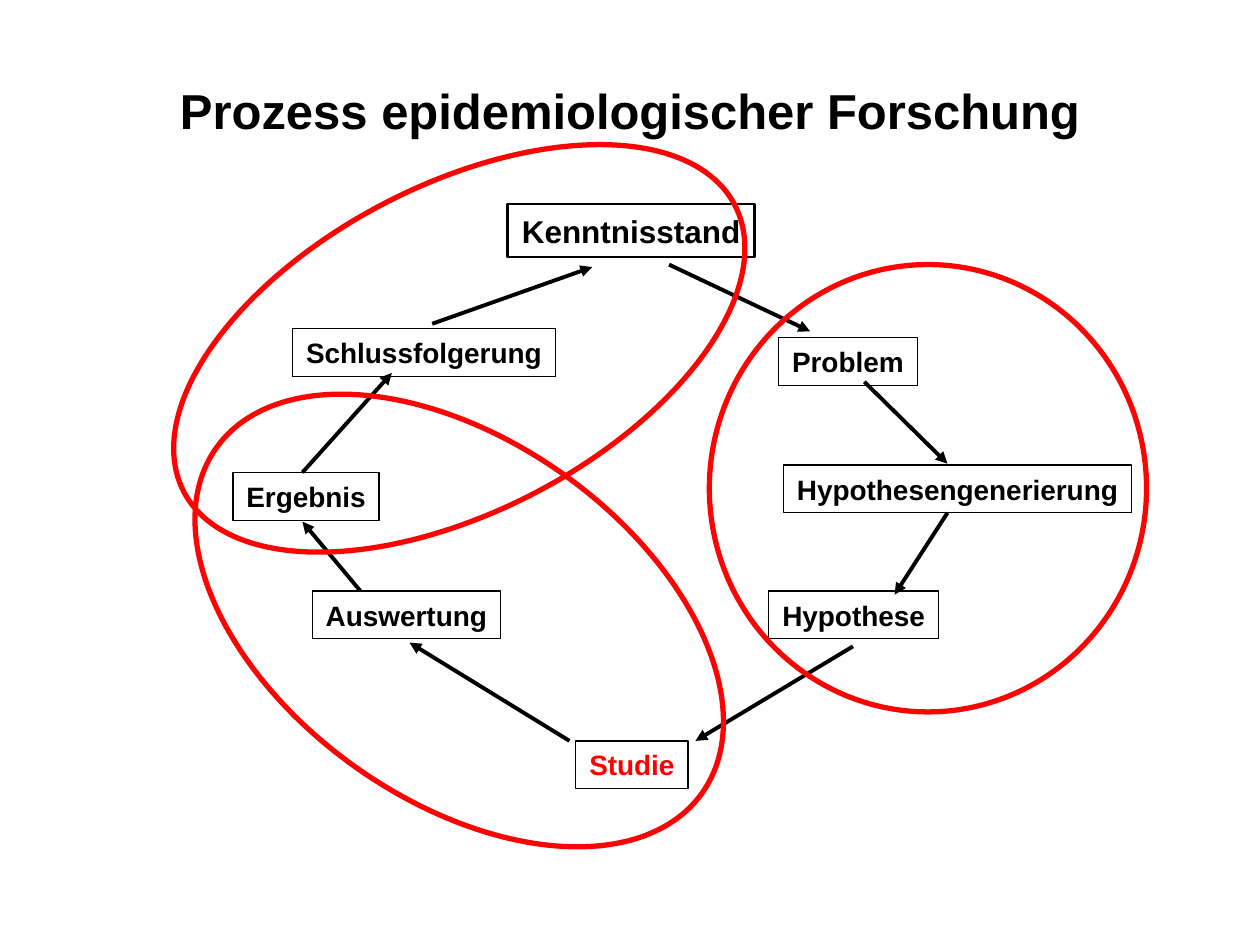
import pptx
import pptx.util
import pptx.dml.color
import pptx.enum.shapes
import pptx.enum.text
import pptx.oxml.ns
from lxml import etree
from pptx.util import Inches, Pt

BLACK = pptx.dml.color.RGBColor(0x00, 0x00, 0x00)
RED = pptx.dml.color.RGBColor(0xFF, 0x00, 0x00)
ELLIPSE_RED = pptx.dml.color.RGBColor(0xFC, 0x04, 0x04)
FONT = "Arial"
STEP_HEIGHT = 0.38

# label, left, top, width
STEPS = [
    ("Problem", 6.18, 2.68, 1.1),
    ("Hypothesengenerierung", 6.22, 3.69, 2.76),
    ("Hypothese", 6.1, 4.69, 1.35),
    ("Auswertung", 2.48, 4.69, 1.49),
    ("Ergebnis", 1.85, 3.75, 1.16),
    ("Schlussfolgerung", 2.32, 2.61, 2.09),
]

# start x, start y, end x, end y, clockwise from Kenntnisstand
ARROWS = [
    (5.31, 2.1, 6.43, 2.63),
    (6.86, 3.03, 7.52, 3.68),
    (7.52, 4.07, 7.1, 4.72),
    (6.77, 5.13, 5.52, 5.88),
    (4.52, 5.88, 3.25, 5.1),
    (2.86, 4.69, 2.4, 4.14),
    (2.4, 3.75, 3.11, 2.96),
    (3.43, 2.57, 4.7, 2.12),
]

# left, top, width, height, rotation
PHASES = [
    (5.63, 2.1, 3.47, 3.55, 0),
    (1.28, 3.5, 4.73, 2.85, 35.4),
    (2.35, 0.3, 2.59, 4.93, 62.5),
]


def write_text(shape, text, size, color, wrap):
    frame = shape.text_frame
    frame.text = text
    frame.word_wrap = wrap
    frame.vertical_anchor = pptx.enum.text.MSO_ANCHOR.MIDDLE
    paragraph = frame.paragraphs[0]
    paragraph.alignment = pptx.enum.text.PP_ALIGN.CENTER
    font = paragraph.runs[0].font
    font.name = FONT
    font.size = Pt(size)
    font.bold = True
    font.color.rgb = color


def add_outline(slide, kind, box, color, width):
    """Add an unfilled preset shape with a coloured outline."""
    shape = slide.shapes.add_shape(kind, *map(Inches, box))
    shape.shadow.inherit = False
    shape.fill.background()
    shape.line.color.rgb = color
    shape.line.width = Pt(width)
    return shape


def add_title(slide, box):
    title = slide.shapes.add_textbox(*map(Inches, box))
    write_text(title, "Prozess epidemiologischer Forschung", 28, BLACK, True)


def add_step(slide, label, box, size=16, color=BLACK, border=0.75):
    rectangle = pptx.enum.shapes.MSO_SHAPE.RECTANGLE
    shape = add_outline(slide, rectangle, box, BLACK, border)
    write_text(shape, label, size, color, False)


def add_arrow(slide, ends):
    straight = pptx.enum.shapes.MSO_CONNECTOR.STRAIGHT
    arrow = slide.shapes.add_connector(straight, *map(Inches, ends))
    arrow.line.color.rgb = BLACK
    arrow.line.width = Pt(2.25)
    qn = pptx.oxml.ns.qn
    line = arrow.line._get_or_add_ln()
    etree.SubElement(line, qn("a:tailEnd"), type="triangle")
    etree.SubElement(arrow._element.spPr, qn("a:effectLst"))


def add_cycle(slide):
    """Place the steps of the research process and the arrows between them."""
    add_step(slide, "Kenntnisstand", (4.03, 1.62, 1.96, 0.42), size=18, border=1.5)
    for label, left, top, width in STEPS:
        add_step(slide, label, (left, top, width, STEP_HEIGHT))
    add_step(slide, "Studie", (4.57, 5.88, 0.89, STEP_HEIGHT), color=RED)
    for ends in ARROWS:
        add_arrow(slide, ends)


def add_phases(slide):
    """Circle the steps that belong together."""
    for *box, rotation in PHASES:
        oval = pptx.enum.shapes.MSO_SHAPE.OVAL
        ellipse = add_outline(slide, oval, box, ELLIPSE_RED, 3)
        ellipse.rotation = rotation


def main():
    presentation = pptx.Presentation()
    presentation.slide_width = Inches(10)
    presentation.slide_height = Inches(7.5)
    slide = presentation.slides.add_slide(presentation.slide_layouts[6])
    add_title(slide, (0.75, 0.25, 8.5, 1.25))
    add_cycle(slide)
    add_phases(slide)
    presentation.save("out.pptx")


if __name__ == "__main__":
    main()
